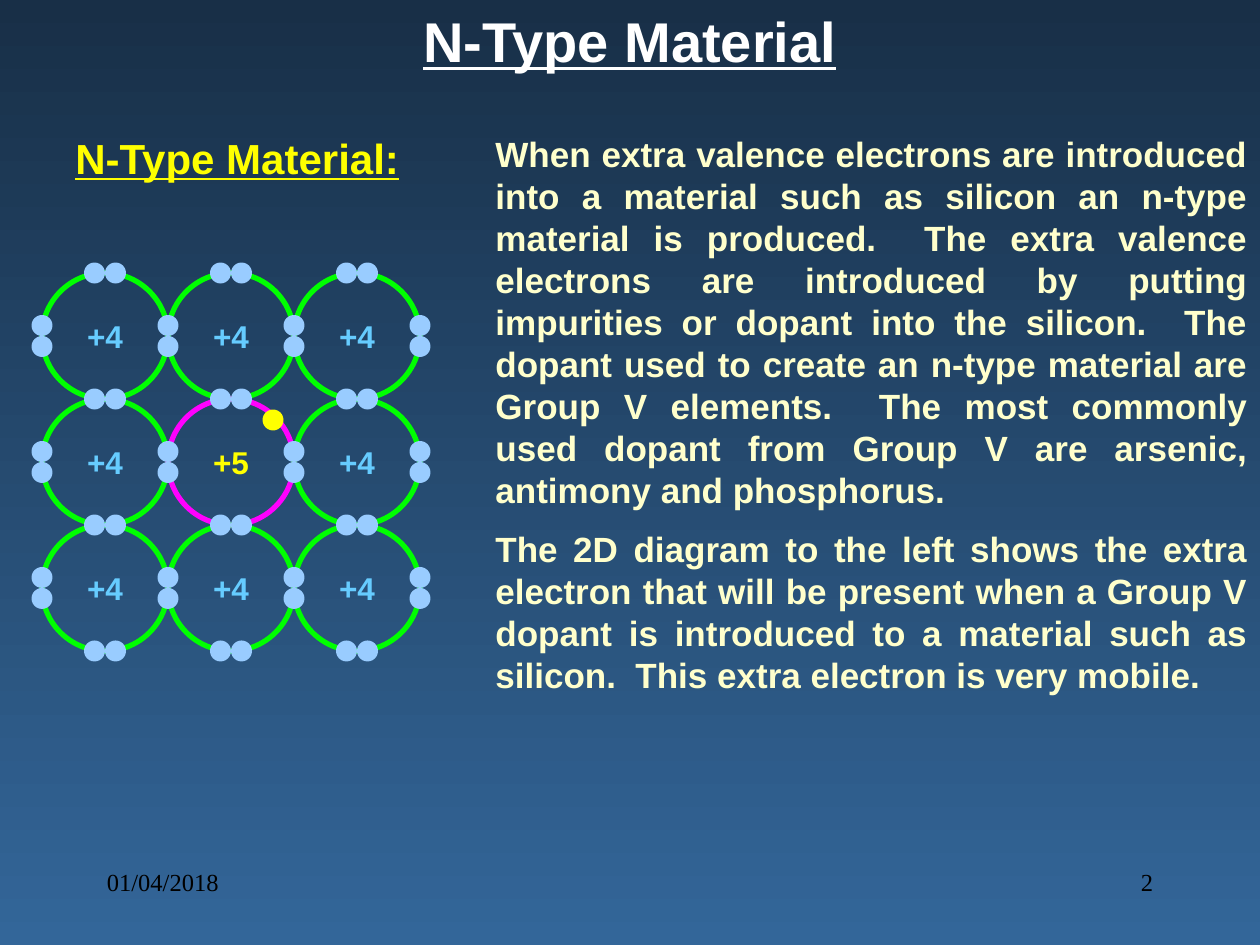
from dataclasses import dataclass

import lxml.etree
import pptx
import pptx.dml.color
import pptx.enum.shapes
import pptx.enum.text
import pptx.oxml.ns
import pptx.util

EMU_PER_PX = 9525
GRID_LEFT, GRID_TOP, RING_SIZE, GRID_COUNT = 32, 208, 96, 3
ELECTRON_SIZE = 16
ELECTRON_COLOR = "99CCFF"
ALIGN = pptx.enum.text.PP_ALIGN


@dataclass(frozen=True)
class TextStyle:
    size: int
    color: str
    font: str = "Arial"
    bold: bool = True
    underline: bool = False
    align: ALIGN = ALIGN.LEFT
    space_before: int = 50  # percent of a line


@dataclass(frozen=True)
class TextBlock:
    left: int
    top: int
    width: int
    height: int
    style: TextStyle
    paragraphs: tuple[str, ...]


@dataclass(frozen=True)
class Atom:
    label: str
    line_color: str
    text_color: str


SILICON = Atom("+4", "00FF00", "66CCFF")
DOPANT = Atom("+5", "FF00FF", "FFFF00")

FOOTER_SIZE, FOOTER_COLOR, FOOTER_FONT = 14, "000000", "Times New Roman"
TEXT_BLOCKS = (
    TextBlock(96, 0, 768, 60,
              TextStyle(32, "FFFFFF", underline=True, align=ALIGN.CENTER),
              ("N-Type Material",)),
    TextBlock(48, 96, 272, 48, TextStyle(24, "FFFF00", underline=True),
              ("N-Type Material:",)),
    TextBlock(368, 96, 592, 442, TextStyle(20, "FFFFCC", align=ALIGN.JUSTIFY), (
        "When extra valence electrons are introduced into a material such as "
        "silicon an n-type material is produced.  The extra valence electrons "
        "are introduced by putting impurities or dopant into the silicon.  The "
        "dopant used to create an n-type material are Group V elements.  The "
        "most commonly used dopant from Group V are arsenic, antimony and "
        "phosphorus.",
        "The 2D diagram to the left shows the extra electron that will be "
        "present when a Group V dopant is introduced to a material such as "
        "silicon.  This extra electron is very mobile.",
    )),
    TextBlock(72, 656, 200, 48,
              TextStyle(FOOTER_SIZE, FOOTER_COLOR, FOOTER_FONT, bold=False,
                        space_before=0),
              ("01/04/2018",)),
    TextBlock(688, 656, 200, 48,
              TextStyle(FOOTER_SIZE, FOOTER_COLOR, FOOTER_FONT, bold=False,
                        align=ALIGN.RIGHT, space_before=0),
              ("2",)),
)


def px(value: int) -> pptx.util.Emu:
    return pptx.util.Emu(value * EMU_PER_PX)


def rgb(color: str) -> pptx.dml.color.RGBColor:
    return pptx.dml.color.RGBColor.from_string(color)


def set_space_before(paragraph, percent: int) -> None:
    """Set the space before as a share of the line height."""
    properties = paragraph._p.get_or_add_pPr()
    spacing = lxml.etree.SubElement(properties, pptx.oxml.ns.qn("a:spcBef"))
    share = lxml.etree.SubElement(spacing, pptx.oxml.ns.qn("a:spcPct"))
    share.set("val", str(percent * 1000))


def write_text(text_frame, paragraphs: tuple[str, ...], style: TextStyle) -> None:
    text_frame.word_wrap = True
    for index, text in enumerate(paragraphs):
        paragraph = text_frame.add_paragraph() if index else text_frame.paragraphs[0]
        paragraph.alignment = style.align
        if style.space_before:
            set_space_before(paragraph, style.space_before)
        run = paragraph.add_run()
        run.text = text
        run.font.name = style.font
        run.font.size = pptx.util.Pt(style.size)
        run.font.bold = style.bold
        run.font.underline = style.underline
        run.font.color.rgb = rgb(style.color)


def add_text_block(slide, block: TextBlock) -> None:
    box = slide.shapes.add_textbox(
        px(block.left), px(block.top), px(block.width), px(block.height))
    write_text(box.text_frame, block.paragraphs, block.style)


def add_circle(slide, left: int, top: int, size: int):
    shape = slide.shapes.add_shape(
        pptx.enum.shapes.MSO_SHAPE.OVAL, px(left), px(top), px(size), px(size))
    shape.shadow.inherit = False
    return shape


def add_atom(slide, left: int, top: int, atom: Atom) -> None:
    ring = add_circle(slide, left, top, RING_SIZE)
    ring.fill.background()
    ring.line.color.rgb = rgb(atom.line_color)
    ring.line.width = pptx.util.Pt(3)
    frame = ring.text_frame
    frame.margin_left = frame.margin_right = frame.margin_top = frame.margin_bottom = 0
    frame.vertical_anchor = pptx.enum.text.MSO_ANCHOR.MIDDLE
    write_text(frame, (atom.label,),
               TextStyle(18, atom.text_color, align=ALIGN.CENTER))


def add_electron(slide, left: int, top: int, color: str) -> None:
    electron = add_circle(slide, left, top, ELECTRON_SIZE)
    electron.fill.solid()
    electron.fill.fore_color.rgb = rgb(color)
    electron.line.fill.background()


def add_lattice(slide) -> None:
    """Draw the atoms, then an electron pair wherever rings touch or end."""
    for row in range(GRID_COUNT):
        for column in range(GRID_COUNT):
            add_atom(slide, GRID_LEFT + column * RING_SIZE,
                     GRID_TOP + row * RING_SIZE,
                     DOPANT if row == column == 1 else SILICON)

    middle = RING_SIZE // 2
    radius = ELECTRON_SIZE // 2
    for edge in range(GRID_COUNT + 1):
        across = edge * RING_SIZE - radius
        for cell in range(GRID_COUNT):
            for shift in (-ELECTRON_SIZE, 0):
                along = cell * RING_SIZE + middle + shift
                add_electron(slide, GRID_LEFT + across, GRID_TOP + along,
                             ELECTRON_COLOR)
                add_electron(slide, GRID_LEFT + along, GRID_TOP + across,
                             ELECTRON_COLOR)

    add_electron(slide, 200, 312, DOPANT.text_color)


def set_background(slide, top_color: str, bottom_color: str) -> None:
    fill = slide.background.fill
    fill.gradient()
    fill.gradient_angle = 270
    for stop, color, position in zip(
            fill.gradient_stops, (top_color, bottom_color), (0, 1)):
        stop.color.rgb = rgb(color)
        stop.position = position


def main() -> None:
    presentation = pptx.Presentation()
    presentation.slide_width, presentation.slide_height = px(960), px(720)
    slide = presentation.slides.add_slide(presentation.slide_layouts[6])
    set_background(slide, "182F47", "336699")
    for block in TEXT_BLOCKS:
        add_text_block(slide, block)
    add_lattice(slide)
    presentation.save("out.pptx")


if __name__ == "__main__":
    main()
